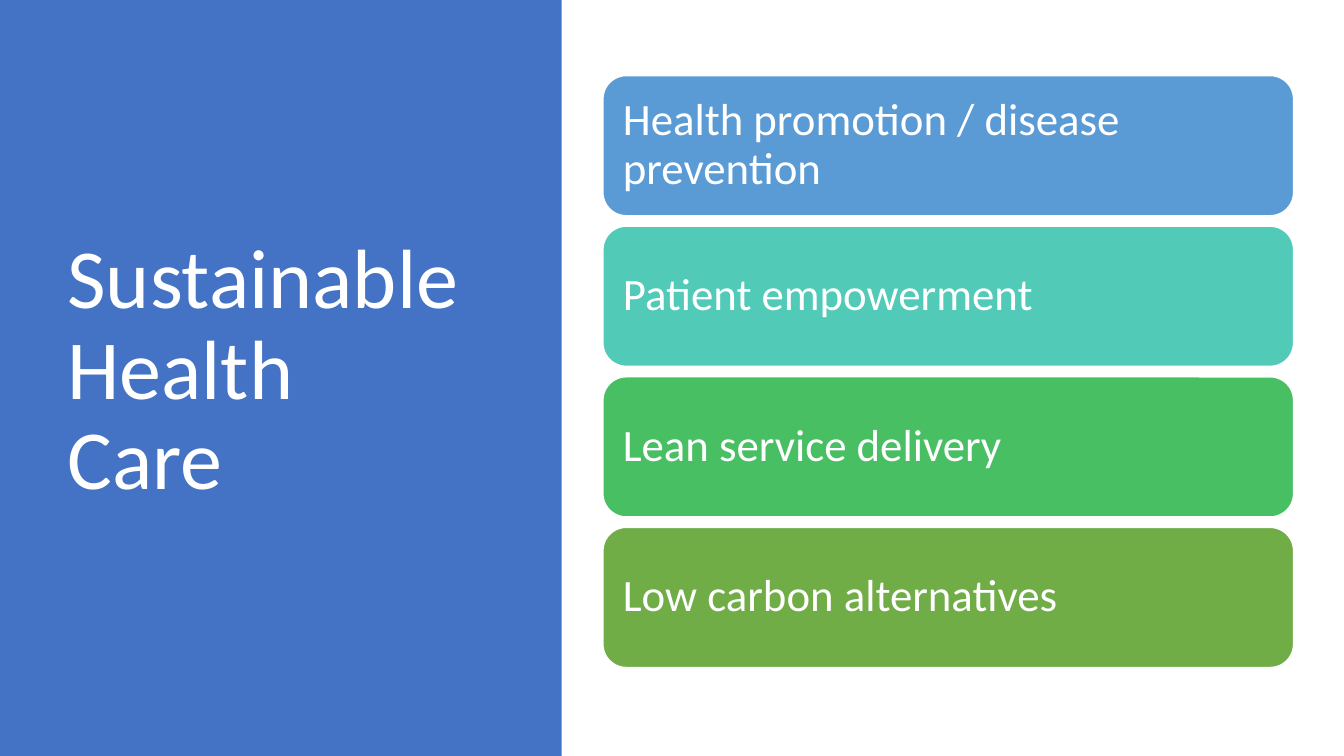
from pptx import Presentation
from pptx.dml.color import RGBColor
from pptx.enum.shapes import MSO_SHAPE
from pptx.enum.text import MSO_ANCHOR, PP_ALIGN
from pptx.util import Inches, Pt

RECT = MSO_SHAPE.RECTANGLE
ROUND = MSO_SHAPE.ROUNDED_RECTANGLE
MIDDLE = MSO_ANCHOR.MIDDLE
LEFT = PP_ALIGN.LEFT
WHITE = "FFFFFF"


def color(hex_code):
    return RGBColor.from_string(hex_code)


def write(shape, text, size):
    frame = shape.text_frame
    frame.word_wrap = True
    frame.vertical_anchor = MIDDLE
    para = frame.paragraphs[0]
    para.alignment = LEFT
    para.line_spacing = 0.9
    run = para.add_run()
    run.text = text
    run.font.name = "Calibri"
    run.font.size = Pt(size)
    run.font.color.rgb = color(WHITE)
    return frame


deck = Presentation()
deck.slide_width = Inches(13.33)
deck.slide_height = Inches(7.5)
slide = deck.slides.add_slide(deck.slide_layouts[6])
shapes = slide.shapes

# Left panel
panel = shapes.add_shape(RECT, 0, 0, Inches(5.57), Inches(7.5))
panel.shadow.inherit = False
panel.fill.solid()
panel.fill.fore_color.rgb = color("4472C4")
panel.line.fill.background()

# Title
title = shapes.add_textbox(Inches(0.57), Inches(0.68), Inches(4.16), Inches(6.02))
write(title, "Sustainable Health Care", 60)

# Stack of principles
cards = [
    ("Health promotion / disease prevention", "5B9BD5"),
    ("Patient empowerment", "52CAB8"),
    ("Lean service delivery", "49BF64"),
    ("Low carbon alternatives", "70AD47"),
]
top, pitch = 0.75, 1.494
for row, (text, fill) in enumerate(cards):
    card = shapes.add_shape(ROUND, Inches(5.98), Inches(top + row * pitch),
                            Inches(6.85), Inches(1.39))
    card.shadow.inherit = False
    card.fill.solid()
    card.fill.fore_color.rgb = color(fill)
    card.line.color.rgb = color(WHITE)
    card.line.width = Pt(1)
    frame = write(card, text, 32)
    frame.margin_left = frame.margin_right = Inches(0.13)
    frame.margin_top = frame.margin_bottom = Inches(0.13)

deck.save("out.pptx")
